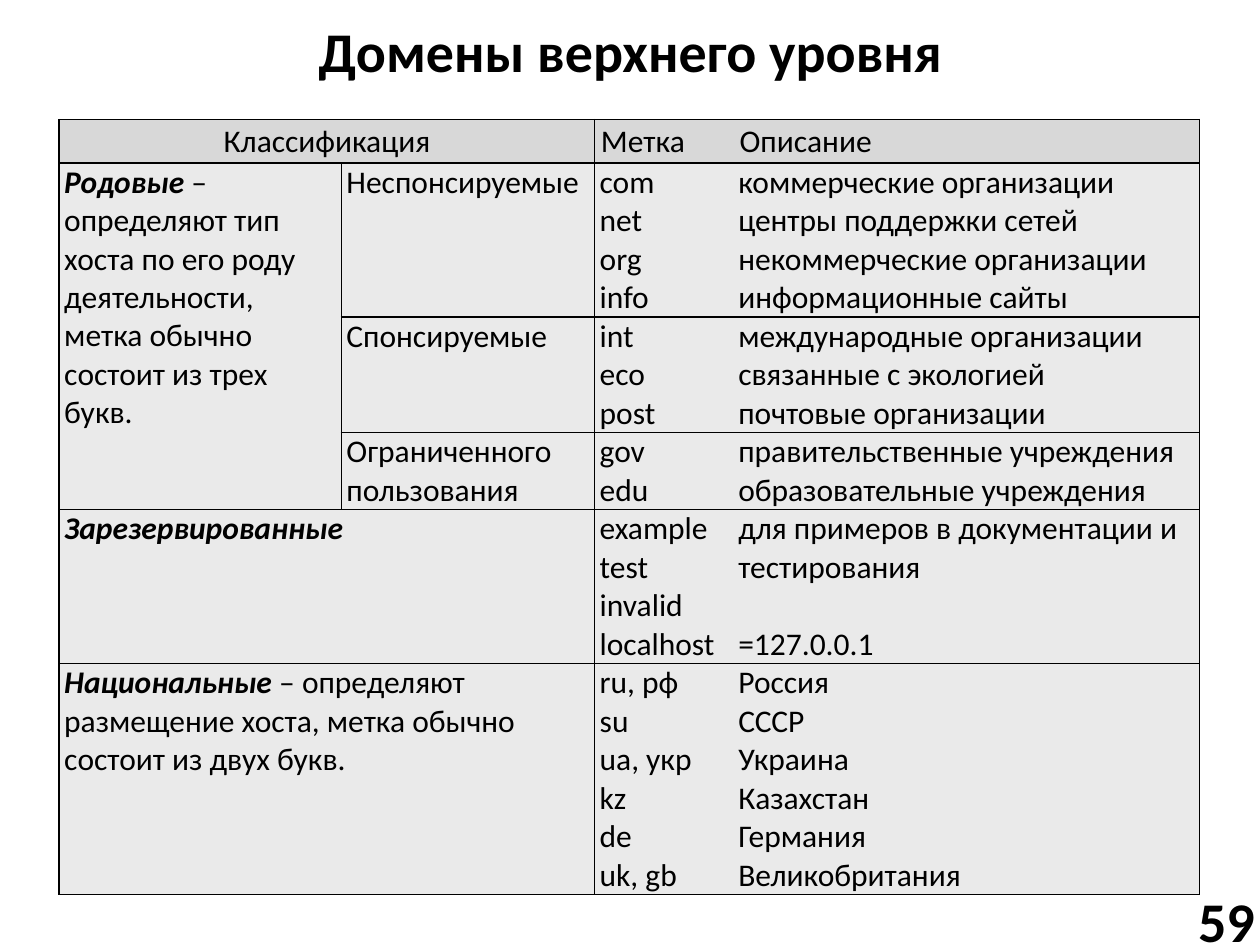
from itertools import product

from pptx import Presentation
from pptx.dml.color import RGBColor
from pptx.enum.text import MSO_ANCHOR as Anchor, PP_ALIGN as Align
from pptx.oxml import parse_xml
from pptx.oxml.ns import nsdecls
from pptx.util import Inches, Pt

BLACK = RGBColor(0x00, 0x00, 0x00)
HEADER_FILL = RGBColor(0xD8, 0xD8, 0xD8)
BODY_FILL = RGBColor(0xEA, 0xEA, 0xEA)
FONT = "Calibri"
COLUMN_WIDTHS = (2.24, 2.01, 1.1, 3.7)
HEADER_HEIGHT, ROW_HEIGHT = 0.34, 0.3

DOMAIN_GROUPS = (
    (("com", "коммерческие организации"), ("net", "центры поддержки сетей"),
     ("org", "некоммерческие организации"), ("info", "информационные сайты")),
    (("int", "международные организации"), ("eco", "связанные с экологией"),
     ("post", "почтовые организации")),
    (("gov", "правительственные учреждения"), ("edu", "образовательные учреждения")),
    (("example", "для примеров в документации и тестирования"), ("test", ""),
     ("invalid", ""), ("localhost", "=127.0.0.1")),
    (("ru, рф", "Россия"), ("su", "СССР"), ("ua, укр", "Украина"),
     ("kz", "Казахстан"), ("de", "Германия"), ("uk, gb", "Великобритания")),
)

# row, column, height, width, emphasized text, plain text
LABELS = (
    (0, 0, 1, 2, "", "Классификация"),
    (1, 0, 9, 1, "Родовые ", "– определяют тип хоста по его роду деятельности, "
                             "метка обычно состоит из трех букв."),
    (1, 1, 4, 1, "", "Неспонсируемые"),
    (5, 1, 3, 1, "", "Спонсируемые"),
    (8, 1, 2, 1, "", "Ограниченного пользования"),
    (10, 0, 4, 2, "Зарезервированные", ""),
    (14, 0, 6, 2, "Национальные ", "– определяют размещение хоста, "
                                   "метка обычно состоит из двух букв."),
)


def set_font(paragraph, size, bold=False):
    """Give a paragraph the common typeface and colour."""
    paragraph.font.name = FONT
    paragraph.font.size = Pt(size)
    paragraph.font.bold = bold
    paragraph.font.color.rgb = BLACK


def place_heading(shape, text, align):
    """Write one large bold line in a shape."""
    frame = shape.text_frame
    frame.word_wrap = True
    frame.vertical_anchor = Anchor.MIDDLE
    frame.text = text
    paragraph = frame.paragraphs[0]
    paragraph.alignment = align
    set_font(paragraph, 32, bold=True)


def set_borders(cell, sides):
    """Draw the named sides of a cell and hide the others."""
    for side in "LRTB":
        paint = f'<a:solidFill><a:srgbClr val="{BLACK}"/></a:solidFill>'
        if side not in sides:
            paint = "<a:noFill/>"
        cell._tc.get_or_add_tcPr().append(parse_xml(
            f'<a:ln{side} {nsdecls("a")} w="{Pt(1)}">{paint}</a:ln{side}>'))


def style_cell(cell, is_header, sides):
    """Set the borders, fill, margins and anchor of a cell."""
    set_borders(cell, sides)
    cell.fill.solid()
    cell.fill.fore_color.rgb = HEADER_FILL if is_header else BODY_FILL
    cell.margin_left = cell.margin_right = Inches(0.05 if is_header else 0.04)
    cell.margin_top = cell.margin_bottom = Inches(0.02 if is_header else 0)
    cell.vertical_anchor = Anchor.MIDDLE if is_header else Anchor.TOP
    set_font(cell.text_frame.paragraphs[0], 18)


def add_label(table, row, column, height, width, emphasized, plain):
    """Merge a block of cells and write its label."""
    for y, x in product(range(row, row + height), range(column, column + width)):
        style_cell(table.cell(y, x), row == 0, "LRTB")
    cell = table.cell(row, column)
    cell.merge(table.cell(row + height - 1, column + width - 1))
    paragraph = cell.text_frame.paragraphs[0]
    paragraph.alignment = Align.CENTER if row == 0 else Align.LEFT
    if emphasized:
        run = paragraph.add_run()
        run.text = emphasized
        run.font.bold = run.font.italic = True
    if plain:
        paragraph.add_run().text = plain


def add_group(table, first_row, entries):
    """Fill a framed group of marks and descriptions."""
    for index, entry in enumerate(entries):
        edges = "T" * (index == 0) + "B" * (index == len(entries) - 1)
        for column, side, text in zip((2, 3), "LR", entry):
            cell = table.cell(first_row + index, column)
            cell.text = text
            style_cell(cell, first_row == 0, side + edges)


def add_domain_table(slide):
    """Build the table of top-level domains."""
    groups = ((("Метка", "Описание"),), *DOMAIN_GROUPS)
    row_count = sum(map(len, groups))
    height = HEADER_HEIGHT + (row_count - 1) * ROW_HEIGHT
    table = slide.shapes.add_table(
        row_count, len(COLUMN_WIDTHS), Inches(0.47), Inches(0.95),
        Inches(sum(COLUMN_WIDTHS)), Inches(height)).table
    for column, width in zip(table.columns, COLUMN_WIDTHS):
        column.width = Inches(width)
    for index, row in enumerate(table.rows):
        row.height = Inches(ROW_HEIGHT if index else HEADER_HEIGHT)
    for label in LABELS:
        add_label(table, *label)
    first_row = 0
    for entries in groups:
        add_group(table, first_row, entries)
        first_row += len(entries)
    table.cell(10, 3).merge(table.cell(12, 3))


def main():
    """Build and save the slide."""
    presentation = Presentation()
    presentation.slide_width, presentation.slide_height = Inches(10), Inches(7.5)
    slide = presentation.slides.add_slide(presentation.slide_layouts[5])
    title = slide.shapes.title
    title.left, title.top = Inches(0.28), Inches(0.05)
    title.width, title.height = Inches(9.45), Inches(0.69)
    place_heading(title, "Домены верхнего уровня", Align.CENTER)
    add_domain_table(slide)
    number = slide.shapes.add_textbox(
        Inches(8.86), Inches(7.1), Inches(1.14), Inches(0.4))
    number.text_frame.margin_right = Inches(0.04)
    place_heading(number, "59", Align.RIGHT)
    presentation.save("out.pptx")


if __name__ == "__main__":
    main()
